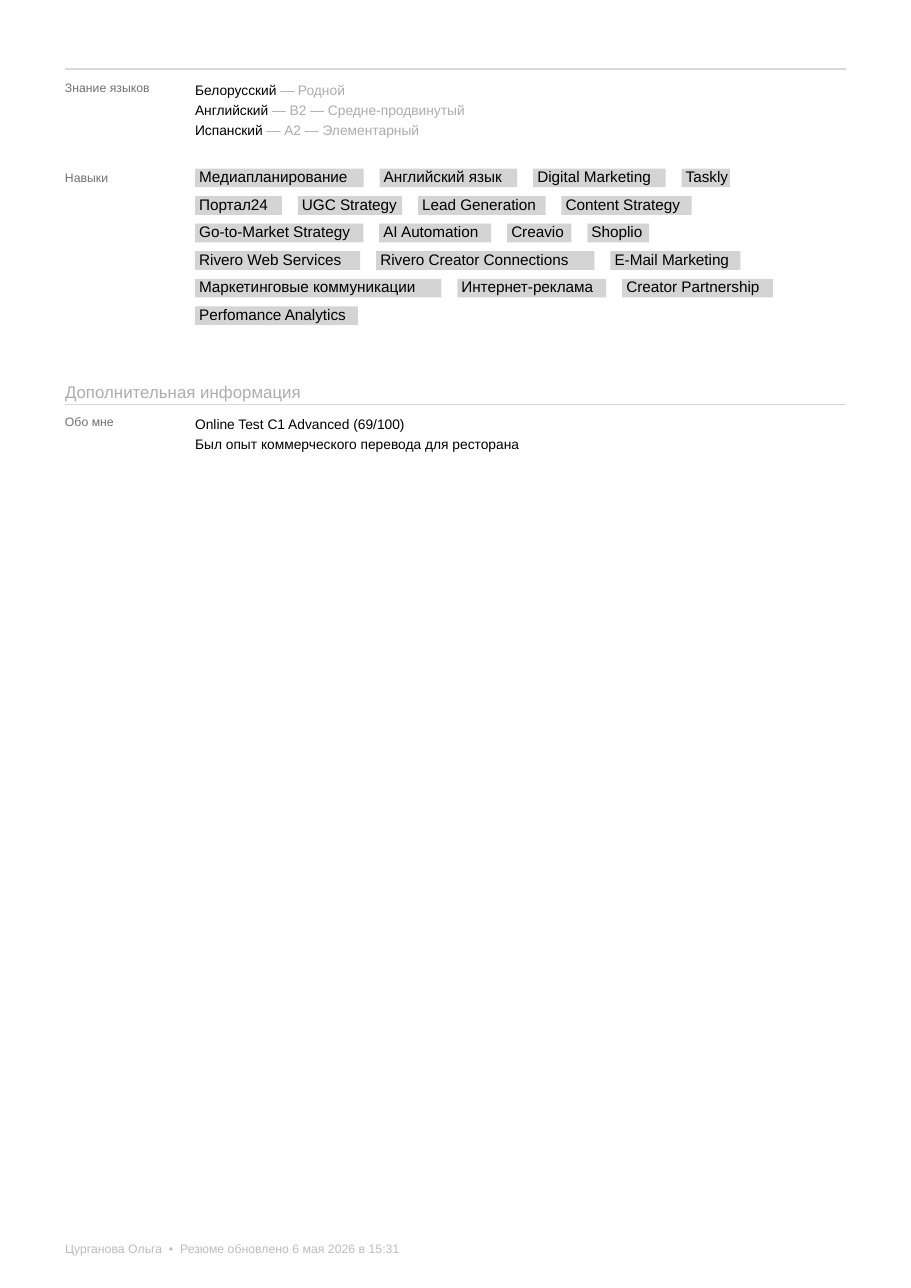
from pptx import Presentation
from pptx.dml.color import RGBColor
from pptx.enum.shapes import MSO_CONNECTOR, MSO_SHAPE
from pptx.enum.text import MSO_ANCHOR, PP_ALIGN
from pptx.oxml.ns import qn
from pptx.util import Pt
from lxml.etree import SubElement

COLORS = {
    "text": "000000",
    "label": "707070",
    "muted": "ADADAD",
    "footer": "BCBCBC",
    "rule": "D8D8D8",
    "tag": "D4D4D4",
}
FONT = "Arial"
LEFT, RIGHT, CONTENT_LEFT = 42.5, 553, 127.5
TAG_TOP, TAG_PITCH, TAG_HEIGHT, TAG_GAP = 110.2, 18, 12.2, 10.4

LANGUAGES = [
    [("Белорусский", "text"), (" — Родной", "muted")],
    [("Английский", "text"), (" — B2 — Средне-продвинутый", "muted")],
    [("Испанский", "text"), (" — A2 — Элементарный", "muted")],
]
SKILL_ROWS = [
    [("Медиапланирование", 110.2), ("Английский язык", 90),
     ("Digital Marketing", 86.6), ("Taskly", 31.6)],
    [("Портал24", 56.8), ("UGC Strategy", 68.2),
     ("Lead Generation", 83.3), ("Content Strategy", 85)],
    [("Go-to-Market Strategy", 110), ("AI Automation", 73.2),
     ("Creavio", 42), ("Shoplio", 40.4)],
    [("Rivero Web Services", 108), ("Rivero Creator Connections", 142.7),
     ("E-Mail Marketing", 85)],
    [("Маркетинговые коммуникации", 161), ("Интернет-реклама", 97.4),
     ("Creator Partnership", 98.5)],
    [("Perfomance Analytics", 106.5)],
]
ABOUT = [
    [("Online Test C1 Advanced (69/100)", "text")],
    [("Был опыт коммерческого перевода для ресторана", "text")],
]


def write_text(frame, lines, size=9, first_spacing=None, spacing=13, insets=(0, 0)):
    frame.word_wrap = True
    frame.vertical_anchor = MSO_ANCHOR.TOP
    frame.margin_left, frame.margin_top = (Pt(inset) for inset in insets)
    frame.margin_right = frame.margin_bottom = 0
    for index, line in enumerate(lines):
        paragraph = frame.add_paragraph() if index else frame.paragraphs[0]
        paragraph.alignment = PP_ALIGN.LEFT
        paragraph.line_spacing = Pt(spacing if index else first_spacing or size)
        for text, color in line:
            run = paragraph.add_run()
            run.text = text
            run.font.name = FONT
            run.font.size = Pt(size)
            run.font.color.rgb = RGBColor.from_string(COLORS[color])


def add_text(slide, left, top, width, height, lines, **text_format):
    box = slide.shapes.add_textbox(Pt(left), Pt(top), Pt(width), Pt(height))
    write_text(box.text_frame, lines, **text_format)


def add_label(slide, top, text, color="label", width=80):
    add_text(slide, LEFT, top, width, 8, [[(text, color)]], size=8)


def add_rule(slide, top):
    rule = slide.shapes.add_connector(
        MSO_CONNECTOR.STRAIGHT, Pt(LEFT), Pt(top), Pt(RIGHT), Pt(top))
    rule.line.color.rgb = RGBColor.from_string(COLORS["rule"])
    rule.line.width = Pt(1)
    SubElement(rule._element.spPr, qn("a:effectLst"))


def add_tag(slide, left, top, width, text):
    tag = slide.shapes.add_shape(
        MSO_SHAPE.RECTANGLE, Pt(left), Pt(top), Pt(width), Pt(TAG_HEIGHT))
    tag.shadow.inherit = False
    tag.fill.solid()
    tag.fill.fore_color.rgb = RGBColor.from_string(COLORS["tag"])
    tag.line.fill.background()
    write_text(tag.text_frame, [[(text, "text")]], size=10, insets=(2.7, 1.2))


def add_skills(slide):
    for row, skills in enumerate(SKILL_ROWS):
        left = CONTENT_LEFT
        for text, width in skills:
            add_tag(slide, left, TAG_TOP + row * TAG_PITCH, width, text)
            left += width + TAG_GAP


def main():
    presentation = Presentation()
    presentation.slide_width = Pt(595.44)
    presentation.slide_height = Pt(841.68)
    slide = presentation.slides.add_slide(presentation.slide_layouts[6])

    add_rule(slide, 45.1)
    add_label(slide, 54, "Знание языков")
    add_text(slide, CONTENT_LEFT, 55.2, 300, 35, LANGUAGES)

    add_label(slide, 112.8, "Навыки")
    add_skills(slide)

    add_text(slide, LEFT, 252.5, 300, 10,
             [[("Дополнительная информация", "muted")]], size=11, first_spacing=10)
    add_rule(slide, 264.4)
    add_label(slide, 272.6, "Обо мне")
    add_text(slide, CONTENT_LEFT, 273.6, 400, 22, ABOUT)

    add_label(slide, 812.6, "Цурганова Ольга  •  Резюме обновлено 6 мая 2026 в 15:31",
              color="footer", width=300)
    presentation.save("out.pptx")


if __name__ == "__main__":
    main()
